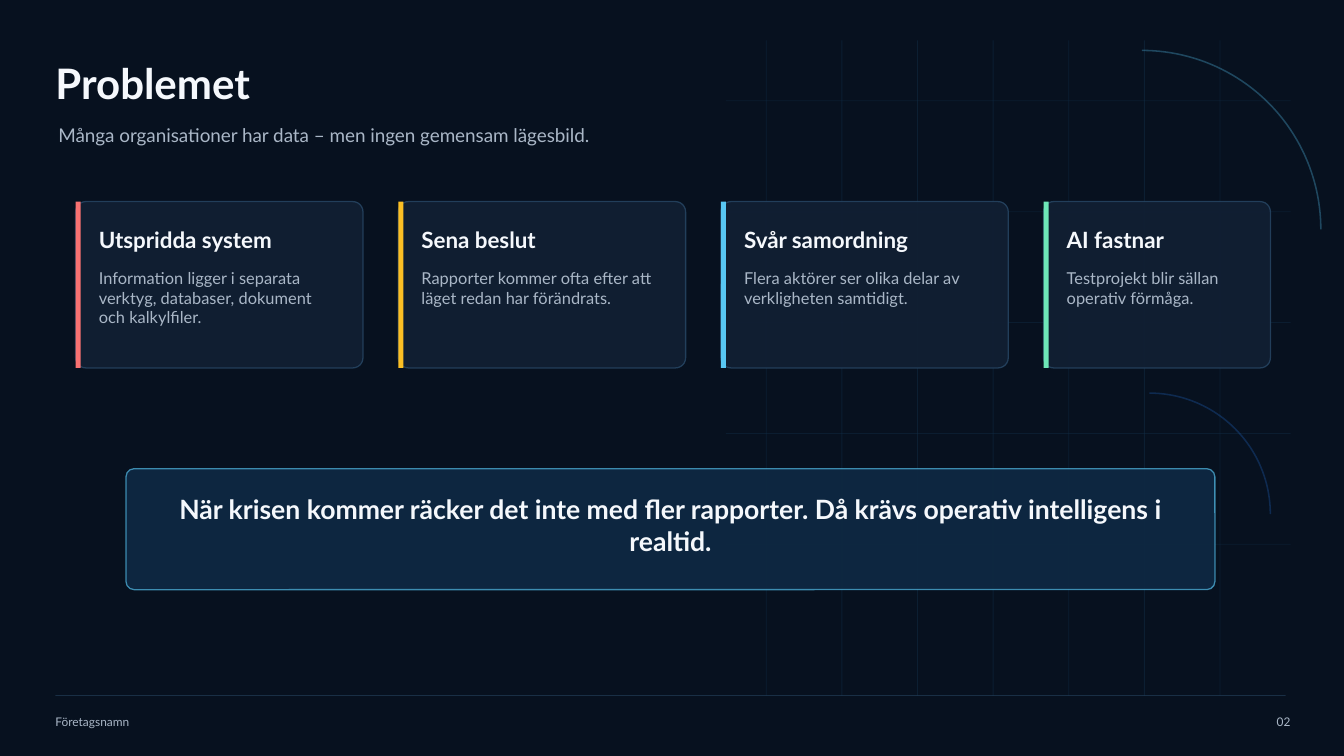
from lxml.etree import SubElement
from pptx import Presentation
from pptx.dml.color import RGBColor
from pptx.enum.shapes import MSO_CONNECTOR, MSO_SHAPE
from pptx.enum.text import MSO_ANCHOR, MSO_AUTO_SIZE, PP_ALIGN
from pptx.oxml.ns import qn
from pptx.util import Emu, Pt

EMU_PER_PX = 9144  # 100 px to the inch
FONT = "Lato"
BACKGROUND, GRID, BORDER = "07111F", "12304A", "284866"
WHITE, MUTED = "F5F8FC", "AAB7C7"
CARD_FILL, QUOTE_FILL = "111F33", "0E2842"
RED, AMBER, CYAN, GREEN, BLUE = "F87171", "FBBF24", "58C7F3", "6EE7B7", "2B87FF"

CARDS = [
    ("Utspridda system", "Information ligger i separata verktyg, databaser, "
     "dokument och kalkylfiler.", RED, 285),
    ("Sena beslut", "Rapporter kommer ofta efter att läget redan har förändrats.",
     AMBER, 285),
    ("Svår samordning", "Flera aktörer ser olika delar av verkligheten samtidigt.",
     CYAN, 285),
    ("AI fastnar", "Testprojekt blir sällan operativ förmåga.", GREEN, 225),
]
CARD_LEFT, CARD_TOP, CARD_HEIGHT, CARD_GAP = 75, 200, 165, 35
CARD_INSET, CARD_MARGIN = 23, 45


def px(*lengths):
    return [Emu(length * EMU_PER_PX) for length in lengths]


def paint(fill, color, opacity=100):
    """Make a fill solid, with opacity in percent."""
    fill.solid()
    fill.fore_color.rgb = RGBColor.from_string(color)
    if opacity < 100:
        for element in fill._xPr.iter(qn("a:srgbClr")):
            SubElement(element, qn("a:alpha"), val=str(opacity * 1000))


def stroke(line, color, width, opacity):
    line.width = Pt(width)
    paint(line.fill, color, opacity)


def add_line(slide, start, end, color, width, opacity):
    connector = slide.shapes.add_connector(
        MSO_CONNECTOR.STRAIGHT, *px(*start, *end))
    stroke(connector.line, color, width, opacity)
    SubElement(connector._element.spPr, qn("a:effectLst"))


def add_shape(slide, kind, box, fill=None, fill_opacity=100, line=None, radius=None):
    """Add a preset shape; line is (color, width, opacity)."""
    shape = slide.shapes.add_shape(kind, *px(*box))
    shape.shadow.inherit = False
    if radius is not None:
        shape.adjustments[0] = radius
    if fill:
        paint(shape.fill, fill, fill_opacity)
    else:
        shape.fill.background()
    if line:
        stroke(shape.line, *line)
    else:
        shape.line.fill.background()


def add_text(slide, text, box, size, color=MUTED, bold=False,
             align=PP_ALIGN.LEFT, anchor=MSO_ANCHOR.MIDDLE, shape=None):
    """Write text in a new text box, or in the given placeholder."""
    shape = shape or slide.shapes.add_textbox(*px(*box))
    shape.left, shape.top, shape.width, shape.height = px(*box)
    frame = shape.text_frame
    frame.text = text
    frame.word_wrap = True
    frame.auto_size = MSO_AUTO_SIZE.NONE
    frame.vertical_anchor = anchor
    frame.margin_left = frame.margin_right = 0
    frame.margin_top = frame.margin_bottom = 0
    paragraph = frame.paragraphs[0]
    paragraph.alignment = align
    font = paragraph.runs[0].font
    font.name, font.size, font.bold = FONT, Pt(size), bold
    font.color.rgb = RGBColor.from_string(color)


def add_backdrop(slide):
    for column in range(7):
        x = 760 + 75 * column
        add_line(slide, (x, 40), (x, 690), GRID, 0.6, 45)
    for row in range(5):
        y = 100 + 110 * row
        add_line(slide, (720, y), (1280, y), GRID, 0.6, 40)
    add_shape(slide, MSO_SHAPE.ARC, (955, 50, 355, 355), line=(CYAN, 1.1, 30))
    add_shape(slide, MSO_SHAPE.ARC, (1020, 390, 240, 240), line=(BLUE, 1.1, 22))


def add_card(slide, left, width, heading, body, accent):
    add_shape(slide, MSO_SHAPE.ROUNDED_RECTANGLE, (left, CARD_TOP, width, CARD_HEIGHT),
              CARD_FILL, 95, (BORDER, 0.9, 82), 0.061)
    add_shape(slide, MSO_SHAPE.RECTANGLE, (left, CARD_TOP, 5, CARD_HEIGHT), accent)
    text_left, text_width = left + CARD_INSET, width - CARD_MARGIN
    add_text(slide, heading, (text_left, CARD_TOP + 22, text_width, 32), 16,
             WHITE, bold=True)
    add_text(slide, body, (text_left, CARD_TOP + 66, text_width, 83), 11.7,
             anchor=MSO_ANCHOR.TOP)


def add_quote(slide, text):
    add_shape(slide, MSO_SHAPE.ROUNDED_RECTANGLE, (125, 465, 1080, 120),
              QUOTE_FILL, 95, (CYAN, 0.9, 65), 0.067)
    add_text(slide, text, (165, 498, 1000, 45), 19, WHITE, bold=True,
             align=PP_ALIGN.CENTER)


def add_footer(slide, name, number):
    add_text(slide, name, (55, 705, 230, 22), 8.5)
    add_line(slide, (55, 690), (1275, 690), BORDER, 0.5, 55)
    add_text(slide, number, (1220, 705, 60, 22), 8.5, align=PP_ALIGN.RIGHT)


def main():
    presentation = Presentation()
    presentation.slide_width, presentation.slide_height = px(1333, 750)
    title_only = presentation.slide_layouts[5]
    slide = presentation.slides.add_slide(title_only)
    paint(slide.background.fill, BACKGROUND)

    add_backdrop(slide)
    add_text(slide, "Problemet", (55, 55, 820, 55), 30, WHITE, bold=True,
             shape=slide.shapes.title)
    add_text(slide, "Många organisationer har data – men ingen gemensam lägesbild.",
             (58, 116, 840, 35), 13.5)
    left = CARD_LEFT
    for heading, body, accent, width in CARDS:
        add_card(slide, left, width, heading, body, accent)
        left += width + CARD_GAP
    add_quote(slide, "När krisen kommer räcker det inte med fler rapporter. "
                     "Då krävs operativ intelligens i realtid.")
    add_footer(slide, "Företagsnamn", "02")
    presentation.save("out.pptx")


if __name__ == "__main__":
    main()
